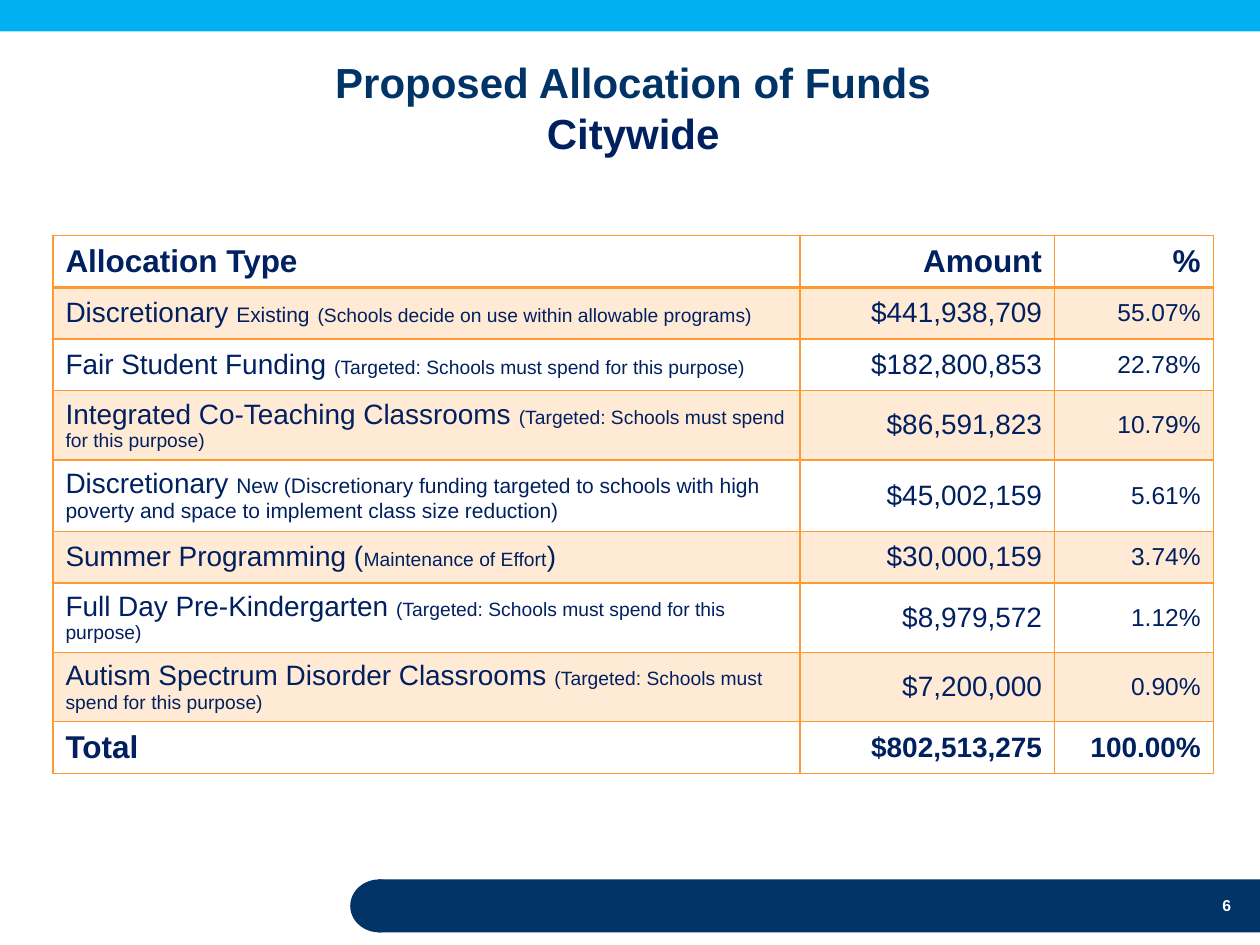
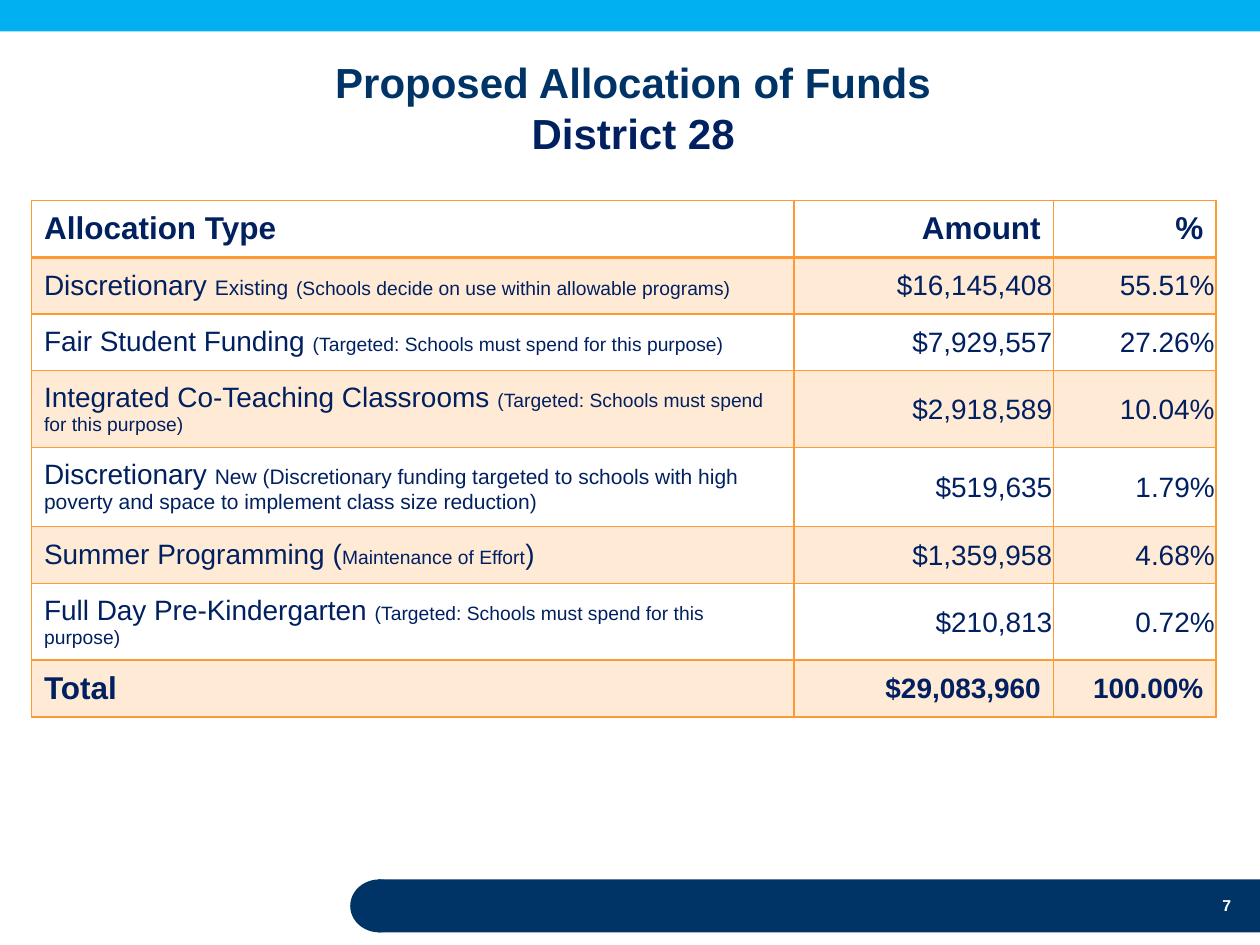
from dataclasses import dataclass

from lxml import etree
from pptx import Presentation
from pptx.dml.color import RGBColor
from pptx.enum.shapes import MSO_SHAPE
from pptx.enum.text import MSO_ANCHOR, MSO_AUTO_SIZE, PP_ALIGN
from pptx.oxml.ns import qn
from pptx.util import Inches, Pt

RECT, OVAL = MSO_SHAPE.RECTANGLE, MSO_SHAPE.OVAL
LEFT, CENTER, RIGHT = PP_ALIGN.LEFT, PP_ALIGN.CENTER, PP_ALIGN.RIGHT
MIDDLE, BOTTOM = MSO_ANCHOR.MIDDLE, MSO_ANCHOR.BOTTOM
TITLE_ONLY = 5


@dataclass(frozen=True)
class Theme:
    font: str = "Arial"
    navy: str = "003366"
    ink: str = "002060"
    sky: str = "00B0F0"
    orange: str = "FF9933"
    white: str = "FFFFFF"
    band_alpha: int = 20
    title: int = 24
    head: int = 18
    body: int = 16
    percent: int = 14
    detail: int = 12
    note: int = 11
    number: int = 9
    line: int = 1
    head_line: int = 2


T = Theme()
TARGETED = ("(Targeted: Schools must spend for this purpose)", T.note)

# Each label is a list of (text, size) runs.
EXISTING = [("Discretionary ", T.body), ("Existing", T.detail), (" ", T.body),
            ("(Schools decide on use within allowable programs)", T.note)]
FAIR = [("Fair Student Funding ", T.body), TARGETED]
CO_TEACHING = [("Integrated Co-Teaching Classrooms ", T.body), TARGETED]
NEW = [("Discretionary ", T.body),
       ("New (Discretionary funding targeted to schools with high poverty "
        "and space to implement class size reduction)", T.detail)]
SUMMER = [("Summer Programming (", T.body), ("Maintenance of Effort", T.note),
          (")", T.body)]
PRE_K = [("Full Day Pre-Kindergarten ", T.body), TARGETED]
AUTISM = [("Autism Spectrum Disorder Classrooms ", T.body), TARGETED]

CITYWIDE = [
    (EXISTING, "$441,938,709", "55.07%", 0.41),
    (FAIR, "$182,800,853", "22.78%", 0.41),
    (CO_TEACHING, "$86,591,823", "10.79%", 0.55),
    (NEW, "$45,002,159", "5.61%", 0.55),
    (SUMMER, "$30,000,159", "3.74%", 0.41),
    (PRE_K, "$8,979,572", "1.12%", 0.41),
    (AUTISM, "$7,200,000", "0.90%", 0.41),
]
DISTRICT = [
    (EXISTING, "$16,145,408", "55.51%", 0.45),
    (FAIR, "$7,929,557", "27.26%", 0.45),
    (CO_TEACHING, "$2,918,589", "10.04%", 0.61),
    (NEW, "$519,635", "1.79%", 0.63),
    (SUMMER, "$1,359,958", "4.68%", 0.45),
    (PRE_K, "$210,813", "0.72%", 0.61),
]


def add_run(p, text, size, color=T.ink, bold=False):
    r = p.add_run()
    r.text = text
    r.font.name = T.font
    r.font.size = Pt(size)
    r.font.bold = bold
    r.font.color.rgb = RGBColor.from_string(color)


def add_block(s, kind, box, color):
    sp = s.shapes.add_shape(kind, *map(Inches, box))
    sp.shadow.inherit = False
    sp.fill.solid()
    sp.fill.fore_color.rgb = RGBColor.from_string(color)
    sp.line.fill.background()


def add_frame(s, number):
    """Draw the top band, the footer pill and the slide number."""
    add_block(s, RECT, (3, 6.98, 7, 0.42), T.navy)
    add_block(s, OVAL, (2.78, 6.98, 0.46, 0.42), T.navy)
    add_block(s, RECT, (0, 0, 10, 0.25), T.sky)
    box = s.shapes.add_textbox(*map(Inches, (8.79, 7.06, 1.08, 0.25)))
    box.text_frame.word_wrap = True
    p = box.text_frame.paragraphs[0]
    p.alignment = RIGHT
    add_run(p, str(number), T.number, T.white, True)


def set_title(s, scope):
    sp = s.shapes.title
    sp.left, sp.top, sp.width, sp.height = map(Inches, (0.8, 0.32, 8.45, 0.98))
    tf = sp.text_frame
    tf.word_wrap = True
    tf.auto_size = MSO_AUTO_SIZE.NONE
    tf.vertical_anchor = BOTTOM
    p = tf.paragraphs[0]
    p.alignment = CENTER
    add_run(p, "Proposed Allocation of Funds", T.title, T.navy, True)
    p.add_line_break()
    add_run(p, scope, T.title, T.ink, True)


def set_borders(cell, top, bottom):
    tc_pr = cell._tc.get_or_add_tcPr()
    sides = {"lnL": T.line, "lnR": T.line, "lnT": top, "lnB": bottom}
    for side, width in sides.items():
        ln = etree.SubElement(tc_pr, qn(f"a:{side}"), w=str(Pt(width)))
        fill = etree.SubElement(ln, qn("a:solidFill"))
        etree.SubElement(fill, qn("a:srgbClr"), val=T.orange)


def set_fill(cell, banded):
    if not banded:
        cell.fill.background()
        return
    cell.fill.solid()
    cell.fill.fore_color.rgb = RGBColor.from_string(T.orange)
    color = cell._tc.tcPr.find(f"{qn('a:solidFill')}/{qn('a:srgbClr')}")
    etree.SubElement(color, qn("a:alpha"), val=str(T.band_alpha * 1000))


def fill_cell(cell, runs, align, bold):
    cell.vertical_anchor = MIDDLE
    p = cell.text_frame.paragraphs[0]
    p.alignment = align
    for text, size in runs:
        add_run(p, text, size, bold=bold)


def set_tight_margins(cell):
    cell.margin_left = cell.margin_top = cell.margin_right = Inches(0.01)
    cell.margin_bottom = 0


def add_allocations(s, origin, cols, items, totals, percent_size, tight):
    """Draw the table; tight drops the margins of the body figures."""
    row_height = items[0][3]
    rows = [[[(text, T.head)] for text in ("Allocation Type", "Amount", "%")]]
    rows += [[label, [(amount, T.body)], [(share, percent_size)]]
             for label, amount, share, _ in items]
    rows.append([[("Total", T.head)], *[[(text, T.body)] for text in totals]])
    heights = [row_height, *[item[3] for item in items], row_height]

    size = sum(cols), sum(heights)
    frame = s.shapes.add_table(len(rows), len(cols),
                               *map(Inches, (*origin, *size)))
    table = frame.table
    table.first_row = table.horz_banding = False
    for column, width in zip(table.columns, cols):
        column.width = Inches(width)
    for i, (row, height) in enumerate(zip(rows, heights)):
        table.rows[i].height = Inches(height)
        is_body = 0 < i < len(rows) - 1
        for j, runs in enumerate(row):
            cell = table.cell(i, j)
            fill_cell(cell, runs, RIGHT if j else LEFT, not is_body)
            set_borders(cell, T.head_line if i == 1 else T.line,
                        T.head_line if i == 0 else T.line)
            set_fill(cell, i % 2 == 1)
            if tight and is_body and j:
                set_tight_margins(cell)


def add_allocation_slide(prs, number, scope, **table):
    s = prs.slides.add_slide(prs.slide_layouts[TITLE_ONLY])
    add_frame(s, number)
    set_title(s, scope)
    add_allocations(s, **table)


def main():
    prs = Presentation()
    prs.slide_width, prs.slide_height = Inches(10), Inches(7.5)
    add_allocation_slide(
        prs, 6, "Citywide", origin=(0.42, 1.87), cols=(5.93, 2.02, 1.26),
        items=CITYWIDE, totals=("$802,513,275", "100.00%"),
        percent_size=T.percent, tight=False)
    add_allocation_slide(
        prs, 7, "District 28", origin=(0.25, 1.59), cols=(6.05, 2.06, 1.29),
        items=DISTRICT, totals=("$29,083,960", "100.00%"),
        percent_size=T.body, tight=True)
    prs.save("out.pptx")


if __name__ == "__main__":
    main()
